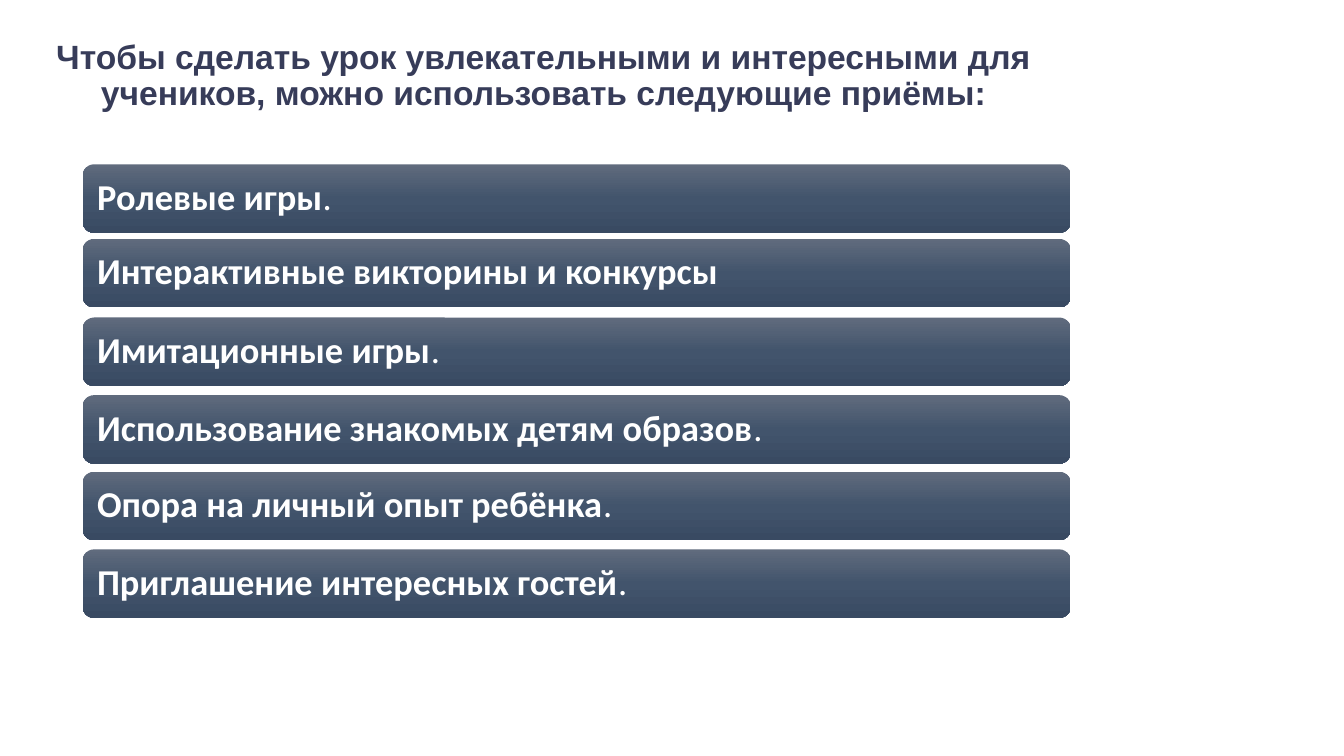
from copy import deepcopy
from dataclasses import dataclass

from pptx import Presentation
from pptx.dml.color import RGBColor
from pptx.enum.shapes import MSO_SHAPE as Shape
from pptx.enum.text import MSO_ANCHOR as Anchor, MSO_AUTO_SIZE as AutoSize, PP_ALIGN as Align
from pptx.oxml.ns import qn
from pptx.util import Pt

PX = 9144  # EMU in one px, 100 px to the inch


@dataclass(frozen=True)
class Theme:
    heading: str = "373C59"
    bar_text: str = "FFFFFF"
    bar_gradient: tuple = ((0, "606B7D"), (0.5, "42546C"), (1, "394A62"))
    heading_font: str = "Arial"
    bar_font: str = "Calibri"
    heading_size: int = 24
    bar_size: int = 26


theme = Theme()


def write(frame, *runs, font, size, color, align, anchor, inset_x, inset_y):
    """Fill a frame with one paragraph made of (text, bold) runs."""
    frame.word_wrap = True
    frame.auto_size = AutoSize.NONE
    frame.vertical_anchor = anchor
    frame.margin_left = frame.margin_right = inset_x * PX
    frame.margin_top = frame.margin_bottom = inset_y * PX
    paragraph = frame.paragraphs[0]
    paragraph.alignment = align
    paragraph.line_spacing = 0.9
    for text, bold in runs:
        run = paragraph.add_run()
        run.text = text
        run.font.name, run.font.size, run.font.bold = font, Pt(size), bold
        run.font.color.rgb = RGBColor.from_string(color)


deck = Presentation()
deck.slide_width, deck.slide_height = 1333 * PX, 750 * PX
slide = deck.slides.add_slide(deck.slide_layouts[5])

# Heading
heading = slide.shapes.title
heading.left, heading.top, heading.width, heading.height = 44 * PX, 35 * PX, 990 * PX, 97 * PX
write(heading.text_frame,
      ("Чтобы сделать урок увлекательными и интересными для учеников, "
       "можно использовать следующие приёмы:", True),
      font=theme.heading_font, size=theme.heading_size, color=theme.heading,
      align=Align.CENTER, anchor=Anchor.TOP, inset_x=10, inset_y=5)

# Teaching techniques: top edge, wording, closing mark
techniques = [
    (163, "Ролевые игры", "."),
    (237, "Интерактивные викторины и конкурсы", ""),
    (315, "Имитационные игры", "."),
    (392, "Использование знакомых детям образов", "."),
    (468, "Опора на личный опыт ребёнка", "."),
    (545, "Приглашение интересных гостей", "."),
]
for top, technique, mark in techniques:
    bar = slide.shapes.add_shape(Shape.ROUNDED_RECTANGLE, 82 * PX, top * PX, 980 * PX, 68 * PX)
    bar.shadow.inherit = False
    bar.line.fill.background()

    # Three-stop gradient from top to bottom
    bar.fill.gradient()
    bar.fill.gradient_angle = 270
    stop_list = bar.fill._xPr.find(qn("a:gradFill")).find(qn("a:gsLst"))
    stop_list.insert(1, deepcopy(stop_list[0]))
    for stop, (position, color) in zip(bar.fill.gradient_stops, theme.bar_gradient):
        stop.position = position
        stop.color.rgb = RGBColor.from_string(color)

    runs = [(technique, True)] + ([(mark, False)] if mark else [])
    write(bar.text_frame, *runs,
          font=theme.bar_font, size=theme.bar_size, color=theme.bar_text,
          align=Align.LEFT, anchor=Anchor.MIDDLE, inset_x=11, inset_y=11)

deck.save("out.pptx")
